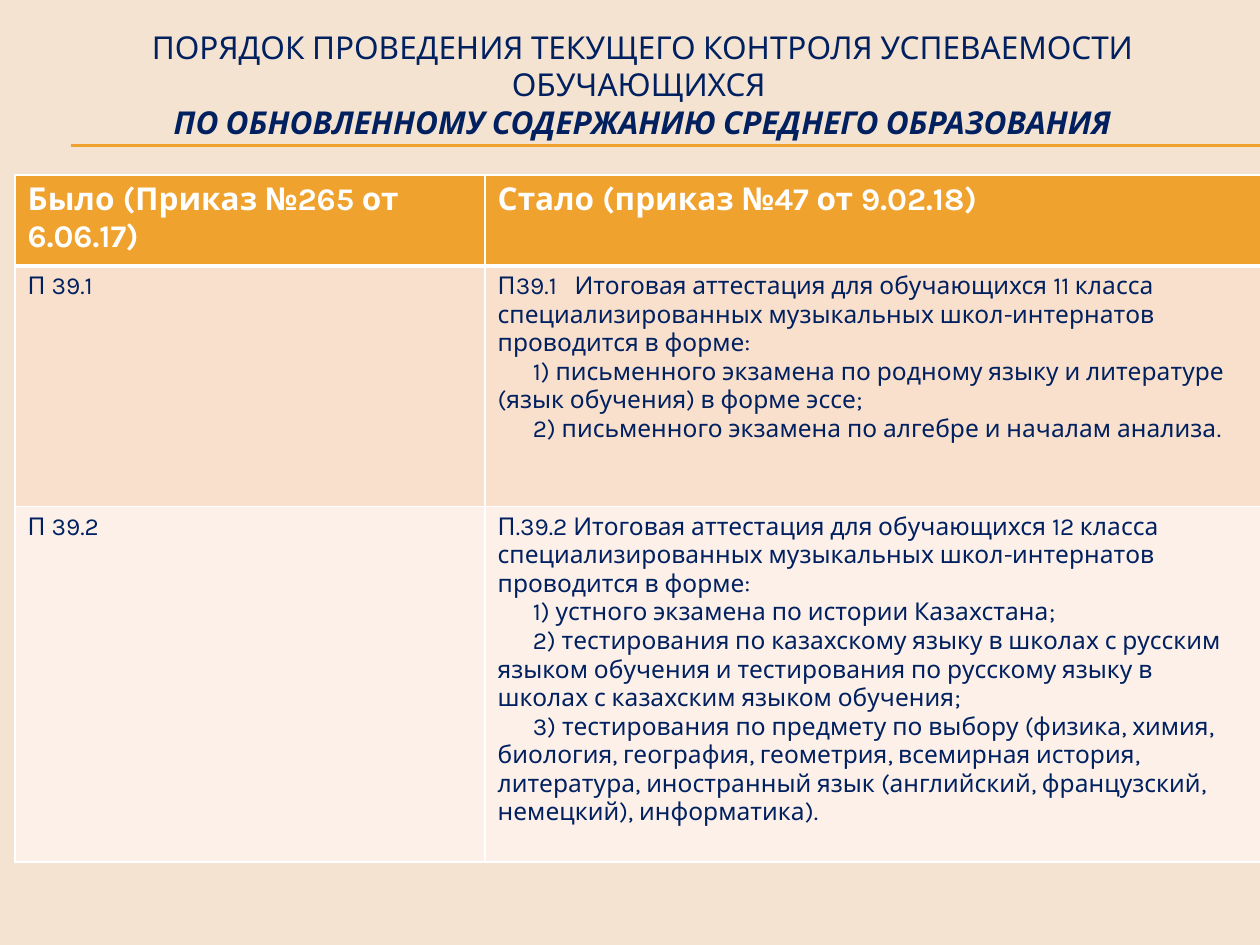
from lxml.etree import SubElement as Sub
from pptx import Presentation
from pptx.dml.color import RGBColor as Rgb
from pptx.enum.shapes import MSO_CONNECTOR as Conn
from pptx.enum.text import MSO_ANCHOR as Anchor, MSO_AUTO_SIZE as Fit, PP_ALIGN as Align
from pptx.oxml.ns import qn
from pptx.util import Inches as In, Pt

HEX = {"sand": "F5E3D1", "gold": "F0A22E", "navy": "002060",
       "white": "FFFFFF", "peach": "F9E0CD", "cream": "FCF0E8"}
FONT = "Karla"
INDENT, TAB = 0.28, 0.61
TITLE = ("ПОРЯДОК ПРОВЕДЕНИЯ ТЕКУЩЕГО КОНТРОЛЯ УСПЕВАЕМОСТИ ОБУЧАЮЩИХСЯ ",
         "ПО ОБНОВЛЕННОМУ СОДЕРЖАНИЮ СРЕДНЕГО ОБРАЗОВАНИЯ")
HEAD = ("Было (Приказ №265 от 6.06.17)", "Стало (приказ №47 от 9.02.18)")
RULES = [
    ("П 39.1", [
        "П39.1\tИтоговая аттестация для обучающихся 11 класса специализированных "
        "музыкальных школ-интернатов проводится в форме:",
        "1) письменного экзамена по родному языку и литературе (язык обучения) в форме эссе;",
        "2) письменного экзамена по алгебре и началам анализа."]),
    ("П 39.2", [
        "П.39.2 Итоговая аттестация для обучающихся 12 класса специализированных "
        "музыкальных школ-интернатов проводится в форме:",
        "1) устного экзамена по истории Казахстана;",
        "2) тестирования по казахскому языку в школах с русским языком обучения "
        "и тестирования по русскому языку в школах с казахским языком обучения;",
        "3) тестирования по предмету по выбору (физика, химия, биология, география, "
        "геометрия, всемирная история, литература, иностранный язык (английский, "
        "французский, немецкий), информатика)."]),
]


def color(name):
    """Return the named colour."""
    return Rgb.from_string(HEX[name])


def write(par, text, size=14, ink="navy", bold=False, italic=False):
    """Add a formatted run to a paragraph."""
    run = par.add_run()
    run.text = text
    font = run.font
    font.name, font.size, font.bold, font.italic = FONT, Pt(size), bold, italic
    font.color.rgb = color(ink)


def rule(slide, left, top, right):
    """Draw a thin level line."""
    line = slide.shapes.add_connector(Conn.STRAIGHT, In(left), In(top), In(right), In(top))
    line.line.color.rgb = color("gold")
    line.line.width = Pt(0.75)
    Sub(line._element.spPr, qn("a:effectLst"))


def title(slide, left, top, width, height):
    """Fill the title placeholder within its box."""
    box = slide.shapes.title
    box.left, box.top, box.width, box.height = map(In, (left, top, width, height))
    frame = box.text_frame
    frame.word_wrap, frame.auto_size = True, Fit.NONE
    frame.vertical_anchor = Anchor.MIDDLE
    par = frame.paragraphs[0]
    par.alignment = Align.CENTER
    write(par, TITLE[0], size=18)
    par.add_line_break()
    write(par, TITLE[1], size=18, bold=True, italic=True)


def edge(cell, side, width):
    """Give one side of a cell a white border."""
    line = Sub(cell._tc.get_or_add_tcPr(), qn(f"a:ln{side}"), w=str(Pt(width)))
    Sub(Sub(line, qn("a:solidFill")), qn("a:srgbClr"), val=HEX["white"])


def fill(cell, lines, back, head=False, **style):
    """Set the borders, colour and paragraphs of a cell."""
    for side in "LRTB":
        edge(cell, side, 3 if head and side == "B" else 1)
    cell.fill.solid()
    cell.fill.fore_color.rgb = color(back)
    frame = cell.text_frame
    for i, text in enumerate(lines):
        par = frame.add_paragraph() if i else frame.paragraphs[0]
        props = par._p.get_or_add_pPr()
        if i:
            props.set("indent", str(In(INDENT)))
        if "\t" in text:
            Sub(Sub(props, qn("a:tabLst")), qn("a:tab"), pos=str(In(TAB)), algn="l")
        write(par, text, **style)


def grid(slide, left, top, cols, rows):
    """Build the table that compares the two orders."""
    frame = slide.shapes.add_table(len(rows), len(cols), In(left), In(top),
                                   In(sum(cols)), In(sum(rows)))
    table = frame.table
    for col, width in zip(table.columns, cols):
        col.width = In(width)
    for row, height in zip(table.rows, rows):
        row.height = In(height)
    for c, text in enumerate(HEAD):
        fill(table.cell(0, c), [text], "gold", head=True, size=18, ink="white", bold=True)
    for r, (name, lines) in enumerate(RULES, 1):
        back = "peach" if r % 2 else "cream"
        fill(table.cell(r, 0), [name], back)
        fill(table.cell(r, 1), lines, back)


def main():
    """Build and save the slide."""
    deck = Presentation()
    deck.slide_width, deck.slide_height = In(10), In(7.5)
    slide = deck.slides.add_slide(deck.slide_layouts[5])
    slide.background.fill.solid()
    slide.background.fill.fore_color.rgb = color("sand")
    for top in (1.15, 1.16):
        rule(slide, 0.56, top, 10)
    title(slide, 0.35, 0.21, 9.5, 0.92)
    grid(slide, 0.12, 1.39, (3.73, 6.16), (0.72, 1.91, 2.82))
    deck.save("out.pptx")


if __name__ == "__main__":
    main()
